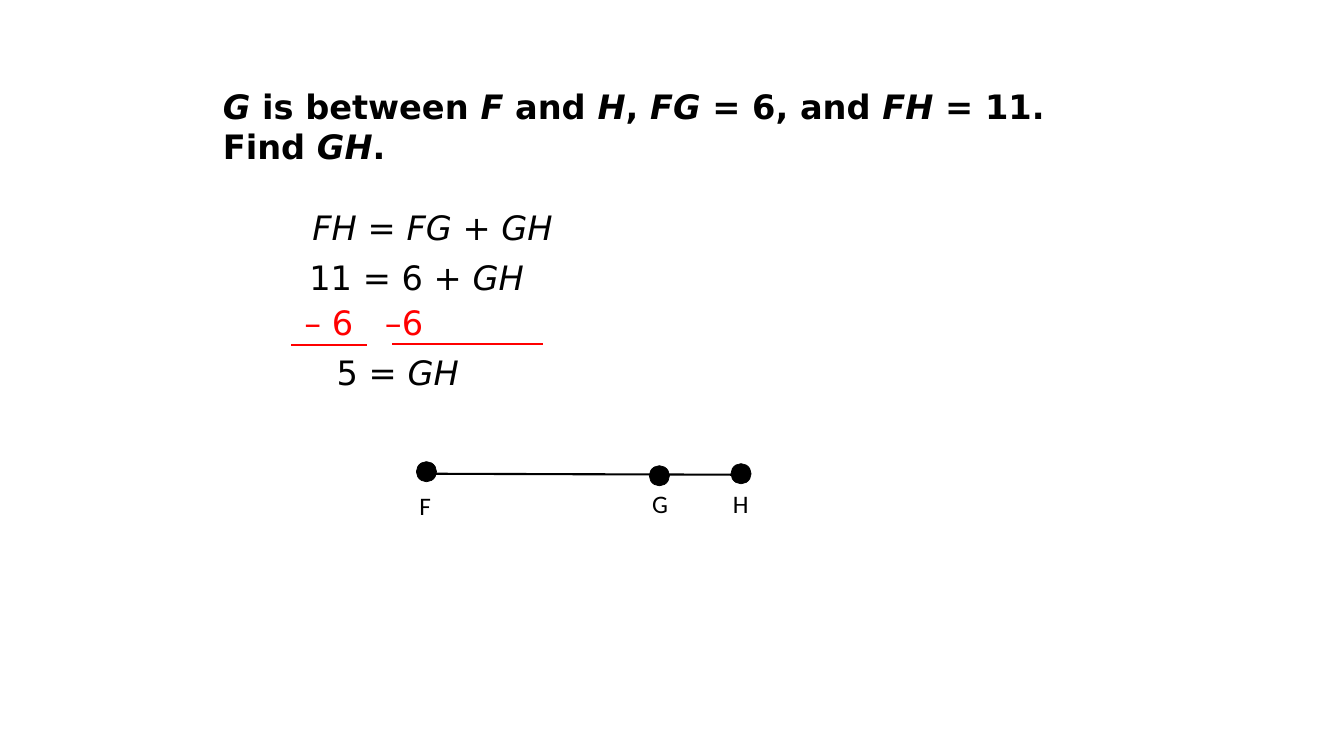
from lxml import etree
from pptx import Presentation
from pptx.dml.color import RGBColor
from pptx.enum.shapes import MSO_CONNECTOR, MSO_SHAPE
from pptx.enum.text import MSO_ANCHOR, MSO_AUTO_SIZE, PP_ALIGN
from pptx.oxml.ns import qn
from pptx.util import Inches, Pt

LINE = MSO_CONNECTOR.STRAIGHT
OVAL = MSO_SHAPE.OVAL
HEX = {"ink": "000000", "red": "FF0000"}
COLOR = {name: RGBColor.from_string(code) for name, code in HEX.items()}

deck = Presentation()
deck.slide_width, deck.slide_height = Inches(13.33), Inches(7.5)
slide = deck.slides.add_slide(deck.slide_layouts[5])
shapes = slide.shapes


def write(box, place, text, size=24, font="DejaVu Sans", color="ink", bold=False):
    """Place a box and fill it; parts between asterisks are italic."""
    box.left, box.top, box.width, box.height = [Inches(n) for n in place]
    frame = box.text_frame
    frame.word_wrap = True
    frame.auto_size = MSO_AUTO_SIZE.NONE
    frame.vertical_anchor = MSO_ANCHOR.TOP
    para = frame.paragraphs[0]
    para.alignment = PP_ALIGN.LEFT
    for i, part in enumerate(text.split("*")):
        if part:
            run = para.add_run()
            run.text = part
            run.font.size, run.font.name = Pt(size), font
            run.font.bold, run.font.italic = bold, i % 2 == 1
            run.font.color.rgb = COLOR[color]
    return para


def rule(x1, y1, x2, y2, color):
    line = shapes.add_connector(LINE, Inches(x1), Inches(y1), Inches(x2), Inches(y2))
    line.line.color.rgb = COLOR[color]
    line.line.width = Pt(1.5)
    etree.SubElement(line._element.spPr, qn("a:effectLst"))


# Question
write(shapes.title, (2.11, 0.8, 9.01, 0.91),
      "*G* is between *F* and *H*, *FG* = 6, and *FH* = 11. Find *GH*.", bold=True)

# Steps of the solution
steps = [
    (3, 2, "*FH* = *FG* + *GH*"),
    (2.97, 2.5, "11 = 6 + *GH*"),
    (3.24, 3.44, "5 = *GH*"),
]
for x, y, text in steps:
    write(shapes.add_textbox(0, 0, 0, 0), (x, y, 3.25, 0.5), text)

# Subtraction on both sides, spaced by a tab stop
minus = write(shapes.add_textbox(0, 0, 0, 0), (2.92, 2.95, 3.3, 0.5),
              "– 6\t–6", color="red")
tabs = etree.SubElement(minus._p.get_or_add_pPr(), qn("a:tabLst"))
etree.SubElement(tabs, qn("a:tab"), pos=str(Inches(0.8)), algn="l")
rule(2.89, 3.42, 3.64, 3.42, "red")
rule(3.89, 3.41, 5.39, 3.41, "red")

# Segment with its points
rule(4.31, 4.7, 7.41, 4.71, "ink")
points = [
    ("F", 4.13, 4.58, 4.06, 4.82),
    ("G", 6.44, 4.62, 6.37, 4.8),
    ("H", 7.25, 4.6, 7.17, 4.8),
]
for name, x, y, left, top in points:
    dot = shapes.add_shape(OVAL, Inches(x), Inches(y), Inches(0.2), Inches(0.2))
    dot.shadow.inherit = False
    dot.fill.solid()
    dot.fill.fore_color.rgb = COLOR["ink"]
    dot.line.color.rgb = COLOR["ink"]
    dot.line.width = Pt(0.5)
    write(shapes.add_textbox(0, 0, 0, 0), (left, top, 0.42, 0.4), name, 18, "Calibri")

deck.save("out.pptx")
